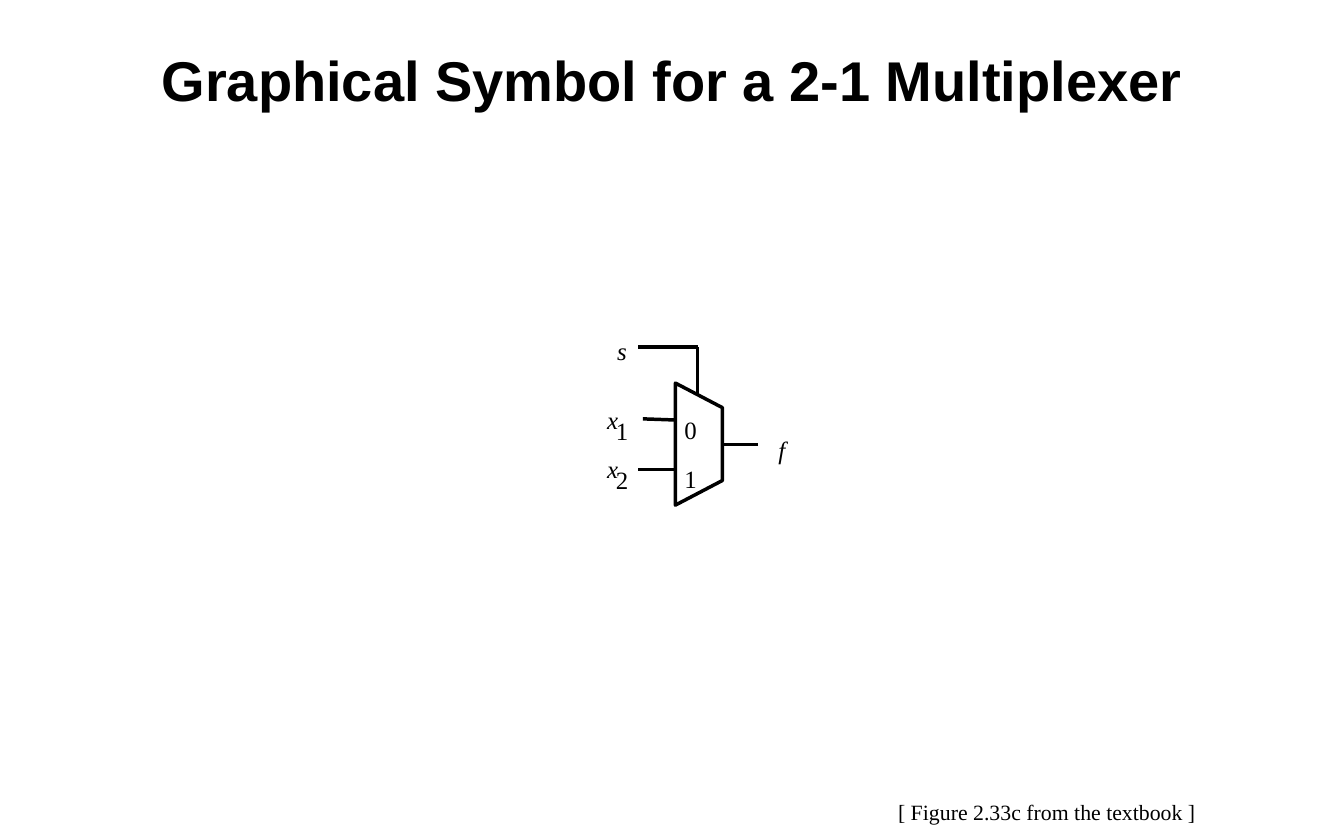
from dataclasses import dataclass

from lxml import etree
from pptx import Presentation
from pptx import util as u
from pptx.dml.color import RGBColor
from pptx.enum import shapes, text
from pptx.oxml import ns


@dataclass(frozen=True)
class Theme:
    ink: RGBColor = RGBColor(0, 0, 0)
    title_font: str = "Arial"
    body_font: str = "Times New Roman"
    title_size: int = 36
    label_size: int = 16
    caption_size: int = 14
    line_width: float = 2.25


THEME = Theme()


def style_run(r, font, size, bold=False, italic=False):
    r.font.name = font
    r.font.size = u.Pt(size)
    r.font.bold = bold
    r.font.italic = italic
    r.font.color.rgb = THEME.ink


def style_line(line):
    line.color.rgb = THEME.ink
    line.width = u.Pt(THEME.line_width)


def set_title(s, title):
    sp = s.shapes.title
    sp.left, sp.top = u.Inches(0), u.Inches(0.33)
    sp.width, sp.height = u.Inches(12), u.Inches(0.75)
    tf = sp.text_frame
    tf.text = title
    tf.vertical_anchor = text.MSO_ANCHOR.MIDDLE
    p = tf.paragraphs[0]
    p.alignment = text.PP_ALIGN.CENTER
    style_run(p.runs[0], THEME.title_font, THEME.title_size, bold=True)


def add_text(parent, words, left, top, width, height, size, italic=False):
    sp = parent.add_textbox(*map(u.Inches, (left, top, width, height)))
    tf = sp.text_frame
    tf.text = words
    tf.word_wrap = False
    tf.auto_size = text.MSO_AUTO_SIZE.SHAPE_TO_FIT_TEXT
    style_run(tf.paragraphs[0].runs[0], THEME.body_font, size, italic=italic)
    return tf


def add_label(parent, words, left, top, width=0.17):
    tf = add_text(parent, words, left, top, width, 0.27,
                  THEME.label_size, italic=words.isalpha())
    tf.margin_left = tf.margin_right = tf.margin_top = tf.margin_bottom = 0


def add_wire(parent, *ends):
    sp = parent.add_connector(shapes.MSO_CONNECTOR.STRAIGHT, *map(u.Inches, ends))
    style_line(sp.line)
    etree.SubElement(sp._element.spPr, ns.qn("a:effectLst"))


def add_outline(parent, points):
    start, *rest = [(u.Inches(x), u.Inches(y)) for x, y in points]
    builder = parent.build_freeform(*start)
    builder.add_line_segments(rest, close=True)
    sp = builder.convert_to_shape()
    sp.shadow.inherit = False
    sp.fill.background()
    style_line(sp.line)


def add_multiplexer(s):
    parent = s.shapes.add_group_shape().shapes
    left, right, select = 6.03, 6.45, 6.23
    add_outline(parent, [(right, 4.29), (right, 3.64), (left, 3.42), (left, 4.51)])

    add_wire(parent, 5.74, 3.74, left, 3.75)
    add_wire(parent, 5.7, 4.19, left, 4.19)
    add_wire(parent, 6.77, 3.97, right, 3.97)
    add_wire(parent, select, 3.1, select, 3.52)
    add_wire(parent, 5.7, 3.1, select, 3.1)

    add_label(parent, "s", 5.51, 3, 0.14)
    add_label(parent, "f", 6.95, 3.88, 0.13)
    for top, index, port in ((3.61, "1", "0"), (4.05, "2", "1")):
        add_label(parent, "x", 5.42, top)
        add_label(parent, index, 5.5, top + 0.1)
        add_label(parent, port, 6.11, top + 0.09)


def main():
    prs = Presentation()
    prs.slide_width, prs.slide_height = u.Inches(12), u.Inches(7.5)
    s = prs.slides.add_slide(prs.slide_layouts[5])
    set_title(s, "Graphical Symbol for a 2-1 Multiplexer")
    add_multiplexer(s)
    add_text(s.shapes, "[ Figure 2.33c from the textbook ]",
             7.92, 7.08, 2.88, 0.34, THEME.caption_size)
    prs.save("out.pptx")


if __name__ == "__main__":
    main()
